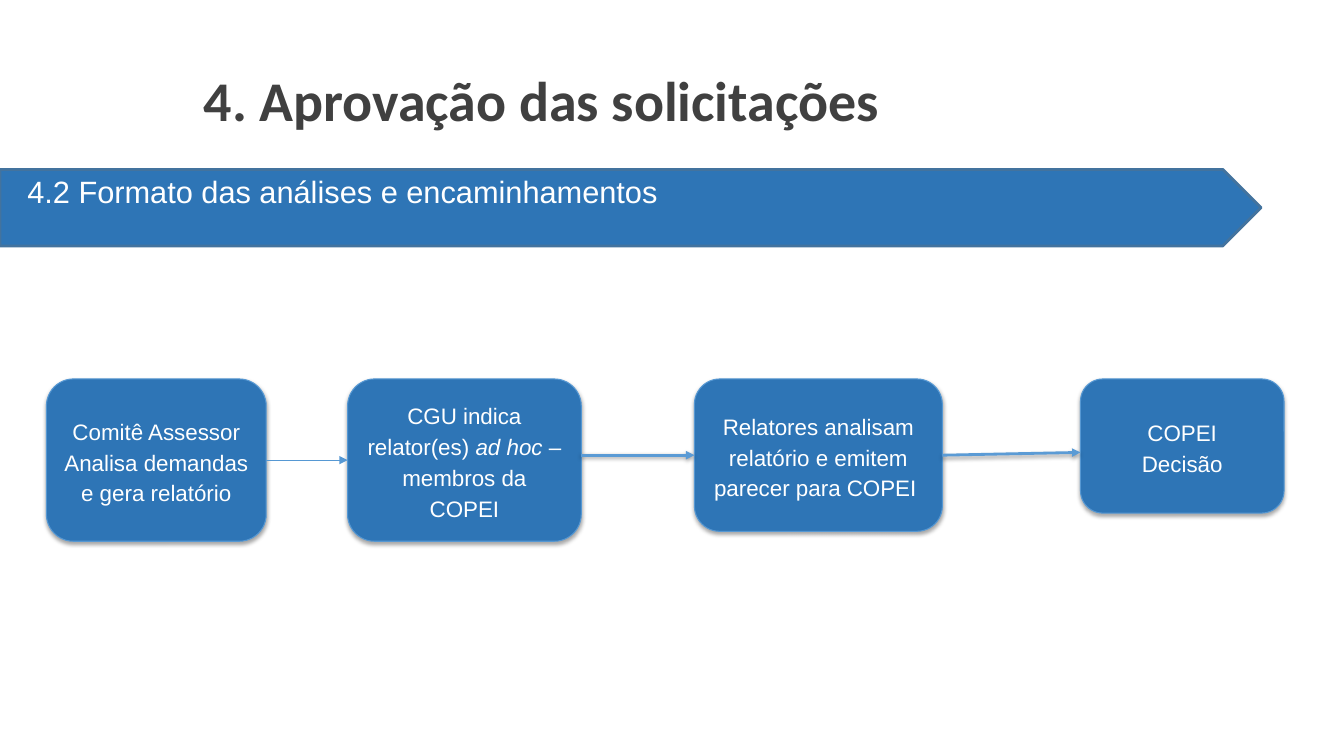
from lxml import etree
from pptx import Presentation
from pptx.dml.color import RGBColor
from pptx.enum.shapes import MSO_CONNECTOR, MSO_SHAPE
from pptx.enum.text import MSO_ANCHOR, MSO_AUTO_SIZE, PP_ALIGN
from pptx.oxml.ns import qn
from pptx.util import Cm, Pt

STRAIGHT = MSO_CONNECTOR.STRAIGHT
PENTAGON, ROUNDED = MSO_SHAPE.PENTAGON, MSO_SHAPE.ROUNDED_RECTANGLE
TOP, MIDDLE = MSO_ANCHOR.TOP, MSO_ANCHOR.MIDDLE
LEFT, CENTER = PP_ALIGN.LEFT, PP_ALIGN.CENTER
NO_AUTOFIT = MSO_AUTO_SIZE.NONE
LEFT_SIDE, RIGHT_SIDE = 1, 3

WHITE = RGBColor(0xFF, 0xFF, 0xFF)
DARK_GREY = RGBColor(0x40, 0x40, 0x40)
BLUE = RGBColor(0x2E, 0x75, 0xB6)
BANNER_EDGE = RGBColor(0x43, 0x73, 0x9E)
STEP_EDGE = RGBColor(0x56, 0x98, 0xD3)
ARROW_BLUE = RGBColor(0x5B, 0x9B, 0xD5)

STEP_TOP = 9.55
# Left, width, height in cm; paragraphs of (text, italic) runs
STEPS = [
    (1.17, 5.54, 4.09, [[("Comitê Assessor", False)],
                        [("Analisa demandas e gera relatório", False)]]),
    (8.76, 5.89, 4.09, [[("CGU indica relator(es) ", False), ("ad hoc ", True),
                         ("– membros da COPEI", False)]]),
    (17.5, 6.25, 3.84, [[("Relatores analisam relatório e emitem parecer para COPEI ", False)]]),
    (27.23, 5.13, 3.38, [[("COPEI", False)], [("Decisão", False)]]),
]


def add_run(paragraph, text, font, size, color, bold=False, italic=False):
    run = paragraph.add_run()
    run.text = text
    run.font.name = font
    run.font.size = Pt(size)
    run.font.color.rgb = color
    run.font.bold = bold
    run.font.italic = italic


def add_shadow(effects, opacity, distance):
    shadow = etree.SubElement(effects, qn("a:outerShdw"), blurRad=str(Pt(3.1)),
                              dist=str(Pt(distance)), dir="5400000", rotWithShape="0")
    black = etree.SubElement(shadow, qn("a:srgbClr"), val="000000")
    etree.SubElement(black, qn("a:alpha"), val=str(opacity * 1000))


def add_block(slide, preset, left, top, width, height, edge, edge_width):
    block = slide.shapes.add_shape(preset, Cm(left), Cm(top), Cm(width), Cm(height))
    block.fill.solid()
    block.fill.fore_color.rgb = BLUE
    block.line.color.rgb = edge
    block.line.width = Pt(edge_width)
    block.shadow.inherit = False
    block.text_frame.word_wrap = True
    return block


def add_title(slide, text):
    title = slide.shapes.title
    title.left, title.top, title.width, title.height = Cm(4.88), Cm(1.4), Cm(25.3), Cm(2.18)
    frame = title.text_frame
    frame.auto_size = NO_AUTOFIT
    frame.vertical_anchor = MIDDLE
    frame.paragraphs[0].alignment = LEFT
    add_run(frame.paragraphs[0], text, "Calibri", 40, DARK_GREY, bold=True)


def add_banner(slide, text):
    banner = add_block(slide, PENTAGON, 0, 4.27, 31.78, 1.93, BANNER_EDGE, 2)
    frame = banner.text_frame
    frame.vertical_anchor = TOP
    frame.margin_left, frame.margin_top = Cm(0.69), Cm(0.08)
    frame.paragraphs[0].alignment = LEFT
    add_run(frame.paragraphs[0], text, "Arial", 22, WHITE)


def add_step(slide, left, width, height, paragraphs):
    step = add_block(slide, ROUNDED, left, STEP_TOP, width, height, STEP_EDGE, 0.75)
    add_shadow(step._element.spPr.find(qn("a:effectLst")), 35, 1.8)
    frame = step.text_frame
    frame.vertical_anchor = MIDDLE
    for index, runs in enumerate(paragraphs):
        paragraph = frame.add_paragraph() if index else frame.paragraphs[0]
        paragraph.alignment = CENTER
        paragraph.line_spacing = 1.15
        for text, italic in runs:
            add_run(paragraph, text, "Arial", 16, WHITE, italic=italic)
    return step


def add_arrow(slide, start, end, color, width, shadowed):
    arrow = slide.shapes.add_connector(STRAIGHT, *(Cm(value) for value in start + end))
    arrow.line.color.rgb = color
    arrow.line.width = Pt(width)
    properties = arrow._element.spPr
    etree.SubElement(properties.find(qn("a:ln")), qn("a:tailEnd"), type="triangle")
    effects = etree.SubElement(properties, qn("a:effectLst"))
    if shadowed:
        add_shadow(effects, 38, 1.6)
    return arrow


def main():
    deck = Presentation()
    deck.slide_width, deck.slide_height = Cm(33.87), Cm(19.05)
    slide = deck.slides.add_slide(deck.slide_layouts[5])

    # Heading
    add_title(slide, "4. Aprovação das solicitações")
    add_banner(slide, "4.2 Formato das análises e encaminhamentos")

    # Approval steps
    committee, appointment, review, decision = [add_step(slide, *step) for step in STEPS]

    # Flow between the steps
    to_appointment = add_arrow(slide, (6.71, 11.6), (8.76, 11.6), STEP_EDGE, 0.75, False)
    to_appointment.begin_connect(committee, RIGHT_SIDE)
    to_appointment.end_connect(appointment, LEFT_SIDE)
    to_review = add_arrow(slide, (14.65, 11.47), (17.5, 11.47), ARROW_BLUE, 2, True)
    to_review.end_connect(review, LEFT_SIDE)
    to_decision = add_arrow(slide, (23.75, 11.47), (27.23, 11.4), ARROW_BLUE, 2, True)
    to_decision.begin_connect(review, RIGHT_SIDE)

    deck.save("out.pptx")


if __name__ == "__main__":
    main()
